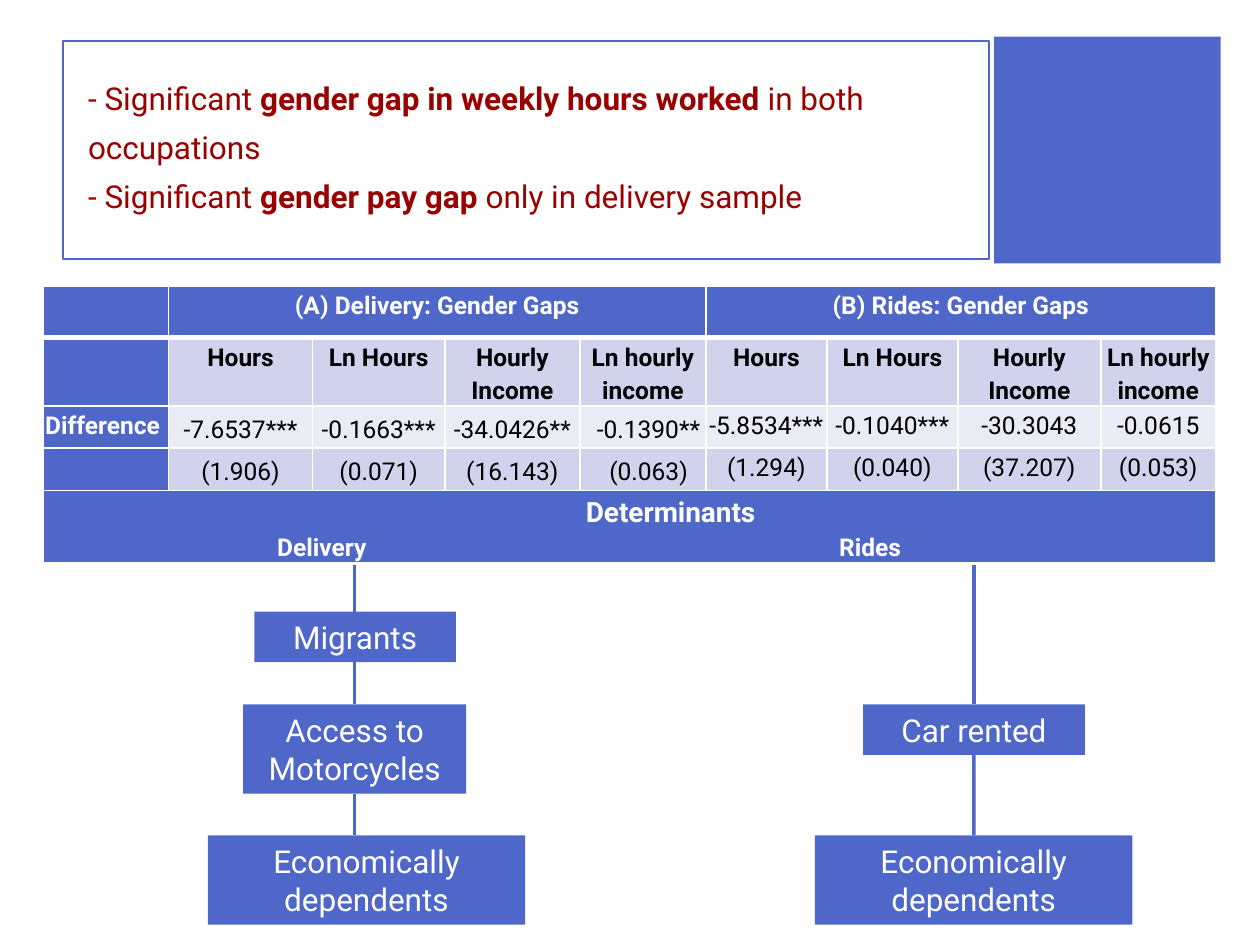
from lxml import etree
from pptx import Presentation, util as u
from pptx.dml.color import RGBColor
from pptx.enum import shapes, text
from pptx.oxml.ns import qn

BLUE, RED, WHITE, BLACK = "4E67C8", "990000", "FFFFFF", "000000"
LIGHT, PALE = "D0D3EB", "E9EBF5"
CENTER = text.PP_ALIGN.CENTER

TITLE = [[("- Significant ", False), ("gender gap in weekly hours worked", True),
          (" in both occupations", False)],
         [("- Significant ", False), ("gender pay gap ", True),
          ("only in delivery sample", False)]]
GROUPS = {1: "(A) Delivery: Gender Gaps", 5: "(B) Rides: Gender Gaps"}
MEASURES = ["Hours", "Ln Hours", "Hourly Income", "Ln hourly income"]
ROWS = [
    ("", MEASURES * 2, LIGHT),
    ("Difference", ["-7.6537***", "-0.1663***", "-34.0426**", "-0.1390**",
                    "-5.8534***", "-0.1040***", "-30.3043", "-0.0615"], PALE),
    ("", ["(1.906)", "(0.071)", "(16.143)", "(0.063)",
          "(1.294)", "(0.040)", "(37.207)", "(0.053)"], LIGHT),
]
COL_WIDTHS = [2.52, 2.9, 2.67, 2.72, 2.54, 2.44, 2.64, 2.88, 2.32]
ROW_HEIGHTS = [1.04, 1.36, 0.85, 0.86, 1.43]
TABLE_LEFT, TABLE_TOP, TABLE_BOTTOM = 0.88, 5.77, 11.38

BRANCHES = [
    [("Access to Motorcycles", 4.9, 14.2, 4.5, 1.8),
     ("Economically dependents", 4.19, 16.84, 6.4, 1.8)],
    [("Car rented", 17.4, 14.2, 4.47, 1.02),
     ("Economically dependents", 16.43, 16.84, 6.4, 1.8)],
]
MIGRANTS = ("Migrants", 5.13, 12.33, 4.06, 1.02)


def rgb(value):
    return RGBColor.from_string(value)


def paint(sp, fill, line=None):
    sp.fill.solid()
    sp.fill.fore_color.rgb = rgb(fill)
    if line:
        sp.line.color.rgb = rgb(line)
        sp.line.width = u.Pt(1)
    else:
        sp.line.fill.background()


def add_run(p, words, size, color, bold=False):
    r = p.add_run()
    r.text = words
    r.font.name, r.font.size, r.font.bold = "Roboto", u.Pt(size), bold
    r.font.color.rgb = rgb(color)


def add_box(s, words, left, top, width, height):
    sp = s.shapes.add_shape(shapes.MSO_SHAPE.RECTANGLE, *map(u.Cm, (left, top, width, height)))
    sp.shadow.inherit = False
    paint(sp, BLUE)
    if words:
        tf = sp.text_frame
        tf.word_wrap = True
        tf.auto_size = text.MSO_AUTO_SIZE.SHAPE_TO_FIT_TEXT
        p = tf.paragraphs[0]
        p.alignment = CENTER
        add_run(p, words, 18, WHITE)
    return sp


def add_line(s, x, top, bottom, begin=None, end=None):
    cx = s.shapes.add_connector(shapes.MSO_CONNECTOR.STRAIGHT, x, top, x, bottom)
    if begin is not None:
        cx.begin_connect(begin, 2)
    if end is not None:
        cx.end_connect(end, 0)
    cx.line.color.rgb = rgb(BLUE)
    cx.line.width = u.Pt(2)
    etree.SubElement(cx._element.spPr, qn("a:effectLst"))


def format_cell(cell, fill, bottom=1):
    cell.margin_left = cell.margin_right = cell.margin_top = u.Cm(0.03)
    cell.margin_bottom = 0
    cell.fill.solid()
    cell.fill.fore_color.rgb = rgb(fill)
    tcPr = cell._tc.get_or_add_tcPr()
    for i, (side, width) in enumerate([("L", 1), ("R", 1), ("T", 1), ("B", bottom)]):
        ln = etree.Element(qn(f"a:ln{side}"), w=str(u.Pt(width)))
        solid = etree.SubElement(ln, qn("a:solidFill"))
        etree.SubElement(solid, qn("a:srgbClr"), val=WHITE)
        tcPr.insert(i, ln)


def write(p, words, color, bold=True, size=14, align=CENTER, indent=0):
    p.line_spacing = 1.15
    p.alignment = align
    if indent:
        p._p.get_or_add_pPr().set("marL", str(u.Cm(indent)))
    add_run(p, words, size, color, bold)


def add_title(s):
    sp = s.shapes.title
    sp.left, sp.top, sp.width, sp.height = map(u.Cm, (1.27, 0.83, 18.67, 4.39))
    paint(sp, WHITE, BLUE)
    tf = sp.text_frame
    tf.word_wrap = True
    tf.auto_size = text.MSO_AUTO_SIZE.NONE
    tf.vertical_anchor = text.MSO_ANCHOR.BOTTOM
    tf.margin_bottom = u.Cm(0.88)
    p = tf.paragraphs[0]
    p.alignment = text.PP_ALIGN.LEFT
    p.line_spacing = 1.3
    p._p.get_or_add_pPr().set("marL", str(u.Cm(0.25)))
    for i, line in enumerate(TITLE):
        if i:
            p.add_line_break()
        for words, bold in line:
            add_run(p, words, 18, RED, bold)


def add_gap_table(s):
    frame = s.shapes.add_table(
        len(ROW_HEIGHTS), len(COL_WIDTHS), u.Cm(TABLE_LEFT), u.Cm(TABLE_TOP),
        u.Cm(sum(COL_WIDTHS)), u.Cm(sum(ROW_HEIGHTS)))
    tbl = frame.table
    tbl.first_row = tbl.horz_banding = False
    for col, width in zip(tbl.columns, COL_WIDTHS):
        col.width = u.Cm(width)
    for row, height in zip(tbl.rows, ROW_HEIGHTS):
        row.height = u.Cm(height)

    last = len(ROW_HEIGHTS) - 1
    fills = [BLUE] + [fill for _, _, fill in ROWS] + [BLUE]
    for i, fill in enumerate(fills):
        for j in range(len(COL_WIDTHS)):
            format_cell(tbl.cell(i, j), fill if j else BLUE, 1 if i else 3)

    for j, words in GROUPS.items():
        tbl.cell(0, j).merge(tbl.cell(0, j + 3))
        write(tbl.cell(0, j).text_frame.paragraphs[0], words, WHITE)
    for i, (label, values, _) in enumerate(ROWS, 1):
        if label:
            write(tbl.cell(i, 0).text_frame.paragraphs[0], label, WHITE,
                  align=text.PP_ALIGN.LEFT)
        for j, words in enumerate(values, 1):
            cell = tbl.cell(i, j)
            if i > 1 and j <= 4:
                cell.vertical_anchor = text.MSO_ANCHOR.MIDDLE
            write(cell.text_frame.paragraphs[0], words, BLACK, bold=i == 1,
                  indent=0.23 if i > 1 and j == 4 else 0)

    cell = tbl.cell(last, 0)
    cell.merge(tbl.cell(last, len(COL_WIDTHS) - 1))
    cell.vertical_anchor = text.MSO_ANCHOR.BOTTOM
    tf = cell.text_frame
    write(tf.paragraphs[0], "Determinants", WHITE, size=16, indent=1.65)
    p = tf.add_paragraph()
    p.line_spacing = 1.15
    tabs = etree.SubElement(p._p.get_or_add_pPr(), qn("a:tabLst"))
    for pos in (5.58, 16.63):
        etree.SubElement(tabs, qn("a:tab"), pos=str(u.Cm(pos)), algn="ctr")
    write(p, "\tDelivery\tRides", WHITE, align=text.PP_ALIGN.LEFT)


def main():
    prs = Presentation()
    prs.slide_width, prs.slide_height = u.Cm(25.4), u.Cm(19.05)
    s = prs.slides.add_slide(prs.slide_layouts[5])
    add_box(s, "", 20.04, 0.74, 4.57, 4.57)
    add_title(s)
    add_gap_table(s)
    for branch in BRANCHES:
        upper, lower = [add_box(s, *item) for item in branch]
        x = upper.left + upper.width // 2
        centred = abs(lower.left + lower.width // 2 - x) < u.Cm(0.1)
        add_line(s, x, u.Cm(TABLE_BOTTOM), upper.top, end=upper)
        add_line(s, x, upper.top + upper.height, lower.top, upper, lower if centred else None)
    add_box(s, *MIGRANTS)
    prs.save("out.pptx")


if __name__ == "__main__":
    main()
